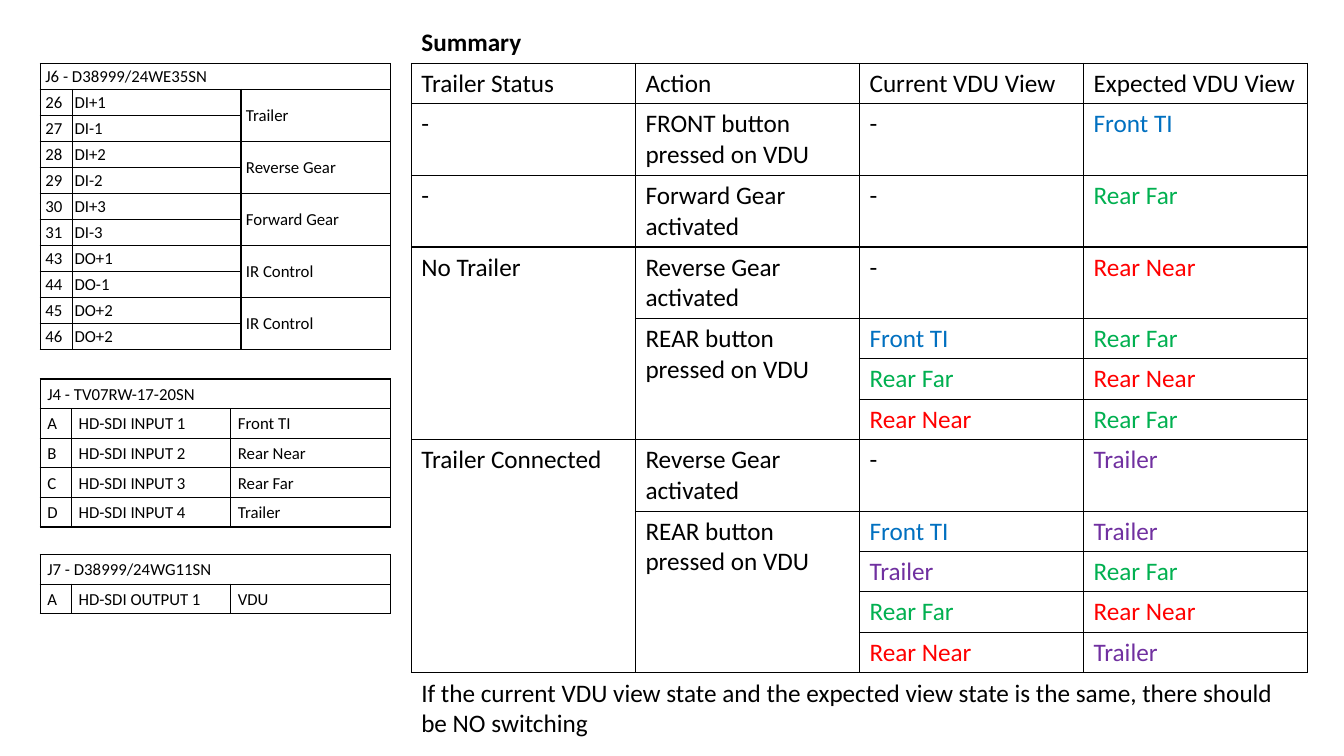
import pptx
import pptx.util
import pptx.dml.color
import pptx.enum.text
import pptx.oxml
import pptx.oxml.ns

Inches = pptx.util.Inches
Anchor = pptx.enum.text.MSO_ANCHOR

HUES = {"ink": "000000", "Front TI": "0070C0", "Rear Far": "00B050",
        "Rear Near": "FF0000", "Trailer": "7030A0"}

# None continues the cell above; a row of one cell spans the whole table
VIEWS = [
    ["Trailer Status", "Action", "Current VDU View", "Expected VDU View"],
    ["-", "FRONT button pressed on VDU", "-", "Front TI"],
    ["-", "Forward Gear activated", "-", "Rear Far"],
    ["No Trailer", "Reverse Gear activated", "-", "Rear Near"],
    [None, "REAR button pressed on VDU", "Front TI", "Rear Far"],
    [None, None, "Rear Far", "Rear Near"],
    [None, None, "Rear Near", "Rear Far"],
    ["Trailer Connected", "Reverse Gear activated", "-", "Trailer"],
    [None, "REAR button pressed on VDU", "Front TI", "Trailer"],
    [None, None, "Trailer", "Rear Far"],
    [None, None, "Rear Far", "Rear Near"],
    [None, None, "Rear Near", "Trailer"],
]
J6 = [
    ["J6 - D38999/24WE35SN"],
    ["26", "DI+1", "Trailer"],
    ["27", "DI-1", None],
    ["28", "DI+2", "Reverse Gear"],
    ["29", "DI-2", None],
    ["30", "DI+3", "Forward Gear"],
    ["31", "DI-3", None],
    ["43", "DO+1", "IR Control"],
    ["44", "DO-1", None],
    ["45", "DO+2", "IR Control"],
    ["46", "DO+2", None],
]
J4 = [
    ["J4 - TV07RW-17-20SN"],
    ["A", "HD-SDI INPUT 1", "Front TI"],
    ["B", "HD-SDI INPUT 2", "Rear Near"],
    ["C", "HD-SDI INPUT 3", "Rear Far"],
    ["D", "HD-SDI INPUT 4", "Trailer"],
]
J7 = [
    ["J7 - D38999/24WG11SN"],
    ["A", "HD-SDI OUTPUT 1", "VDU"],
]


def write(frame, text, size=18, bold=False, hue="ink", lead=None):
    """Put one formatted run into a text frame."""
    line = frame.paragraphs[0]
    line.alignment = pptx.enum.text.PP_ALIGN.LEFT
    line.line_spacing = lead
    run = line.add_run()
    run.text = text
    run.font.name = "Calibri"
    run.font.size = pptx.util.Pt(size)
    run.font.bold = bold
    run.font.color.rgb = pptx.dml.color.RGBColor.from_string(HUES[hue])


def rule(cell):
    """Draw thin black borders around a cell without fill."""
    props = cell._tc.get_or_add_tcPr()
    for side in "LRTB":
        props.append(pptx.oxml.parse_xml(
            f'<a:ln{side} {pptx.oxml.ns.nsdecls("a")} w="12700"><a:solidFill>'
            f'<a:srgbClr val="{HUES["ink"]}"/></a:solidFill></a:ln{side}>'))
    cell.fill.background()


def grid(slide, box, rows, cols, highs, pads=None, tint=False, **style):
    """Add a ruled table; pads holds the side inset of each column."""
    grid = slide.shapes.add_table(len(rows), len(cols), *map(Inches, box)).table
    grid.first_row = grid.horz_banding = False
    for col, wide in zip(grid.columns, cols):
        col.width = Inches(wide)
    for row, high in zip(grid.rows, highs):
        row.height = Inches(high)
    for cell in grid.iter_cells():
        rule(cell)
    for c in range(len(cols)):
        for r, row in enumerate(rows):
            if c >= len(row) or row[c] is None:
                continue
            cell, end = grid.cell(r, c), r
            if pads:
                cell.margin_left = cell.margin_right = Inches(pads[c])
                cell.margin_top = cell.margin_bottom = 0
                cell.vertical_anchor = Anchor.MIDDLE
            hue = row[c] if tint and row[c] in HUES else "ink"
            write(cell.text_frame, row[c], hue=hue, **style)
            # Merge across a heading row, or down over continued cells
            if len(row) == 1:
                cell.merge(grid.cell(r, len(cols) - 1))
            while end + 1 < len(rows) and rows[end + 1][c:c + 1] == [None]:
                end += 1
            if end > r:
                cell.merge(grid.cell(end, c))


def place(shape, box):
    """Set a text shape's box and let it grow with its text."""
    shape.left, shape.top, shape.width, shape.height = map(Inches, box)
    frame = shape.text_frame
    frame.word_wrap = True
    frame.auto_size = pptx.enum.text.MSO_AUTO_SIZE.SHAPE_TO_FIT_TEXT
    frame.vertical_anchor = Anchor.TOP
    return frame


def pins(slide, box, rows, cols, pads):
    """Connector table with equal rows."""
    highs = [box[3] / len(rows)] * len(rows)
    grid(slide, box, rows, cols, highs, pads, size=12, lead=1.07)


def summary(slide, box):
    """Heading, view table and closing note, stacked in the box."""
    left, top, wide, high = box
    write(place(slide.shapes.title, (left, top, wide, 0.4)), "Summary", bold=True)
    highs = [0.71 if "activated" in str(row[1]) or "FRONT" in str(row[1])
             else 0.4 for row in VIEWS]
    grid(slide, (left, top + 0.42, wide, sum(highs)), VIEWS, [wide / 4] * 4,
         highs, tint=True)
    note = slide.shapes.add_textbox(0, 0, 0, 0)
    write(place(note, (left, top + high - 0.71, wide, 0.71)),
          "If the current VDU view state and the expected view state "
          "is the same, there should be NO switching")


def main():
    deck = pptx.Presentation()
    deck.slide_width, deck.slide_height = Inches(13.33), Inches(7.5)
    slide = deck.slides.add_slide(deck.slide_layouts[5])
    summary(slide, (4.08, 0.21, 8.89, 7.17))

    # Connector tables down the left side
    left, wide = 0.4, 3.47
    pins(slide, (left, 0.63, wide, 2.84), J6, [0.32, 1.67, 1.48], [0.05, 0.02, 0.05])
    for top, high, rows in ((3.76, 1.47, J4), (5.5, 0.59, J7)):
        pins(slide, (left, top, wide, high), rows, [0.31, 1.58, 1.58], [0.07] * 3)
    deck.save("out.pptx")


if __name__ == "__main__":
    main()
